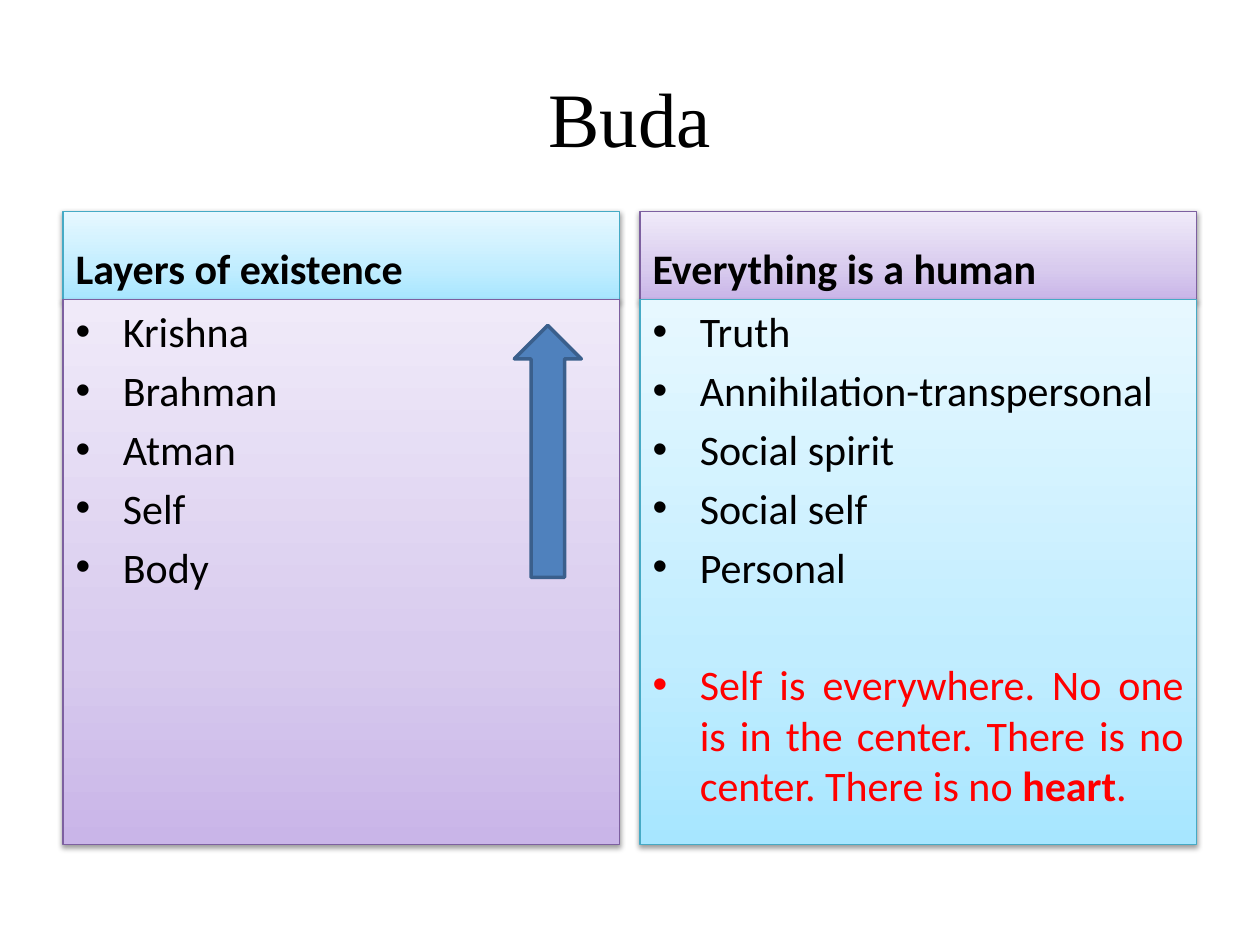
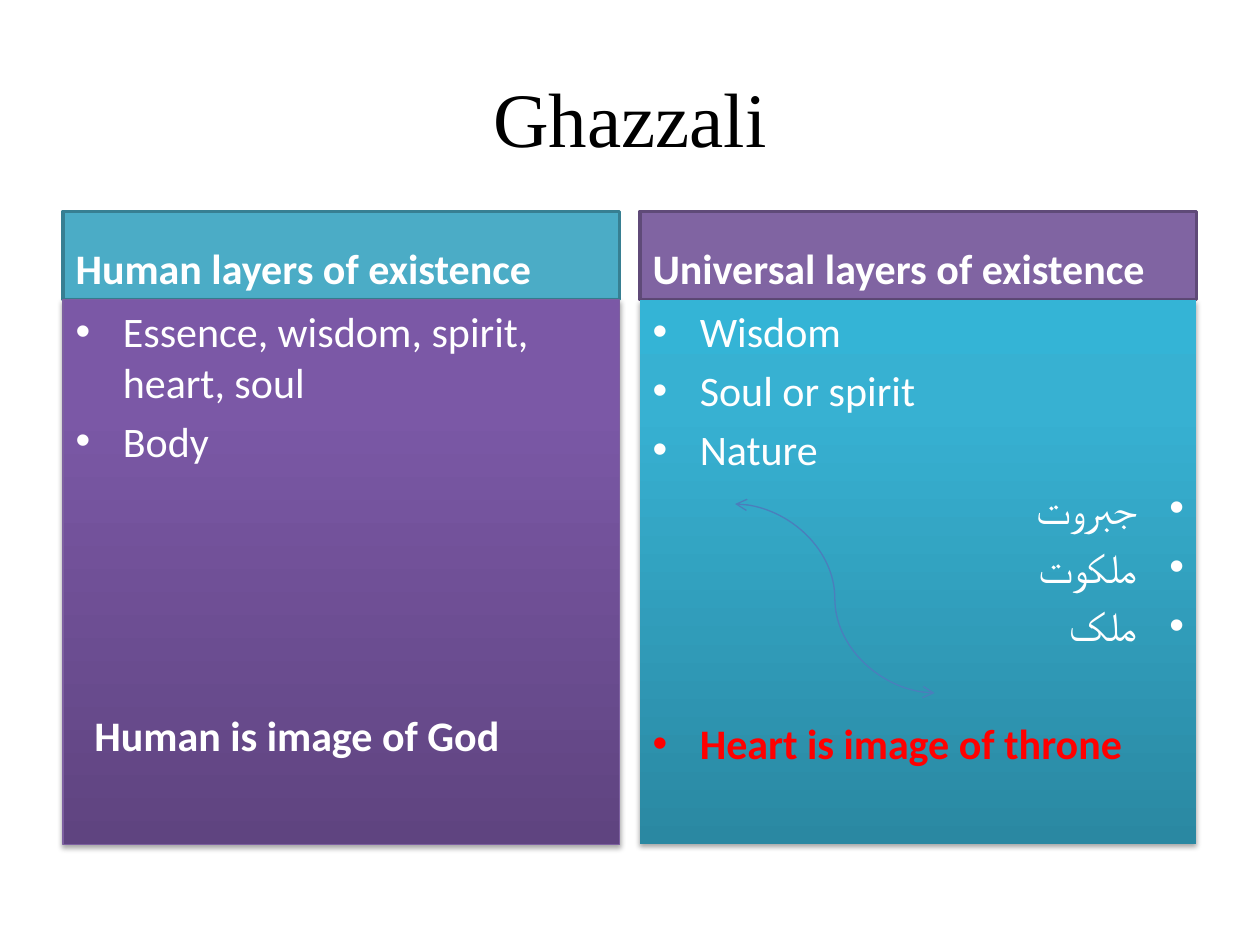
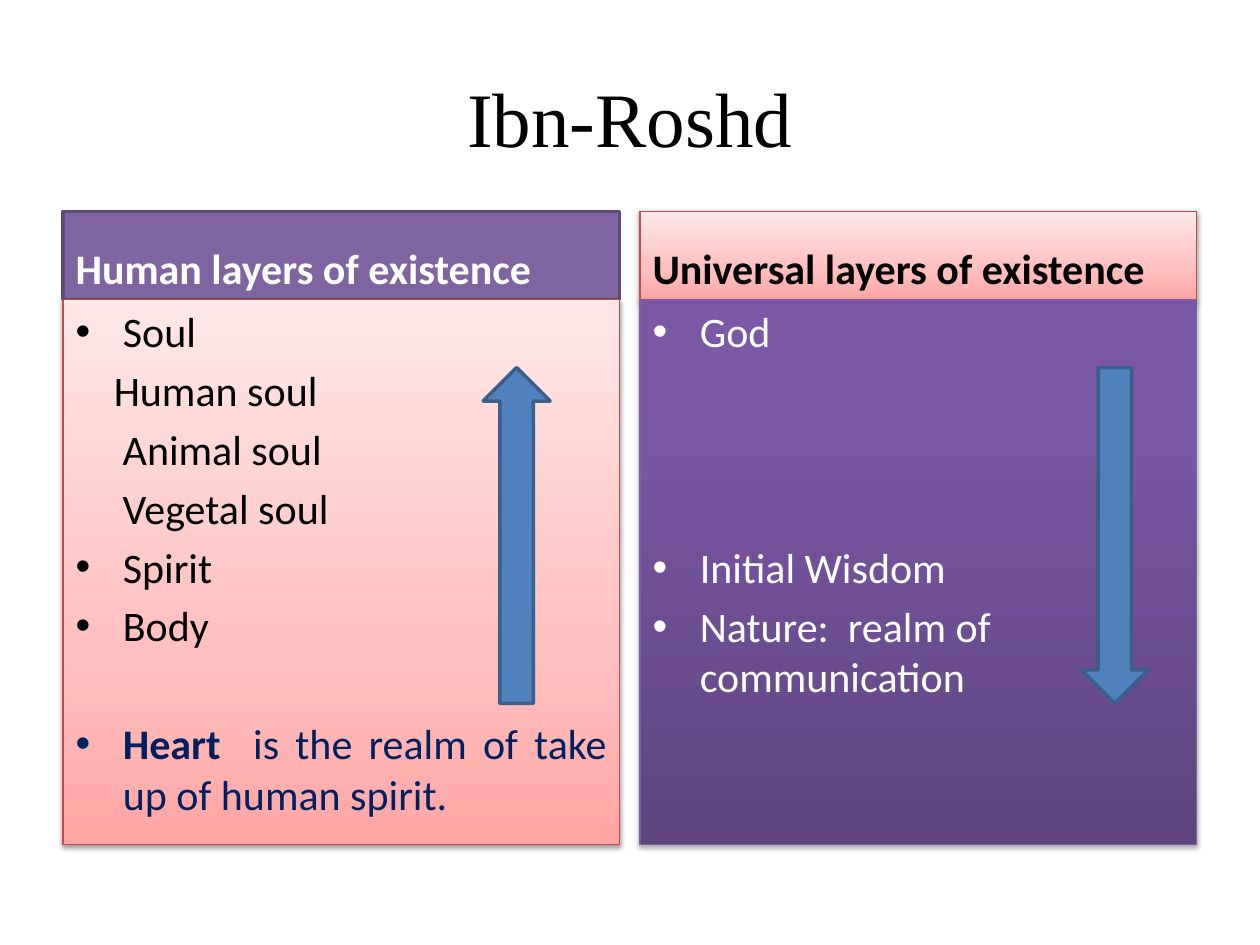
"""Build three slides comparing layers of existence in two coloured columns."""
from copy import deepcopy
from dataclasses import dataclass, field

from lxml import etree
from pptx import Presentation
from pptx import util as u
from pptx.dml.color import RGBColor
from pptx.enum import shapes, text
from pptx.oxml.ns import qn


@dataclass
class Theme:
    title_font: str = "Times New Roman"
    body_font: str = "Calibri"
    title_size: int = 44
    body_size: int = 24
    line_pitch: float = 33.7
    paragraph_gap: float = 4.8
    black: str = "000000"
    white: str = "FFFFFF"
    red: str = "FF0000"
    navy: str = "002060"
    arrow_fill: str = "4F81BD"
    arrow_line: str = "3A5F8C"
    curve_line: str = "4B7EBC"
    soft_shadow: tuple = (38, 1.6)
    deep_shadow: tuple = (35, 1.8)
    panels: dict = field(default_factory=dict)


@dataclass
class Item:
    runs: list
    color: str = ""
    blanks: int = 0
    indent: float = 0
    align: object = None
    rtl: bool = False


theme = Theme()
theme.panels = {
    "pale aqua": ([(0, "A7E6FF"), (35, "C1EDFF"), (100, "E7F8FF")], "46AAC5", 0.75, theme.black, theme.soft_shadow),
    "pale purple": ([(0, "C9B5E8"), (35, "D8CBEE"), (100, "F0EAF9")], "7D60A0", 0.75, theme.black, theme.soft_shadow),
    "pale red": ([(0, "FFA6A5"), (35, "FFC0BF"), (100, "FFE7E7")], "BF4C48", 0.75, theme.black, theme.soft_shadow),
    "deep purple": ([(0, "5F4480"), (80, "7B58A6"), (100, "7C57A8")], "7D60A0", 0.75, theme.white, theme.deep_shadow),
    "deep aqua": ([(0, "2A88A2"), (80, "37B1D2"), (100, "34B4D6")], None, 0, theme.white, theme.deep_shadow),
    "flat aqua": ([(0, "4BACC6")], "377F92", 2, theme.white, None),
    "flat purple": ([(0, "8064A2")], "5F4A78", 2, theme.white, None),
}


def add_run(paragraph, words, font_name, size, color, bold=False):
    """Append one formatted run."""
    run = paragraph.add_run()
    run.text = words
    run.font.name = font_name
    run.font.size = u.Pt(size)
    run.font.bold = bold
    run.font.color.rgb = RGBColor.from_string(color)


def paint_panel(shape, panel):
    """Give a placeholder its fill, outline and shadow."""
    stops, line_color, line_width, _, shadow = panel
    properties = shape._element.spPr
    if len(stops) == 1:
        shape.fill.solid()
        shape.fill.fore_color.rgb = RGBColor.from_string(stops[0][1])
    else:
        shape.fill.gradient()
        shape.fill.gradient_angle = 90
        stop_list = properties.find(".//" + qn("a:gsLst"))
        stop_list.append(deepcopy(stop_list[-1]))
        for stop, (position, color) in zip(shape.fill.gradient_stops, stops):
            stop.position = position / 100
            stop.color.rgb = RGBColor.from_string(color)
    if line_color:
        shape.line.color.rgb = RGBColor.from_string(line_color)
        shape.line.width = u.Pt(line_width)
    else:
        shape.line.fill.background()
    shape.shadow.inherit = False
    if shadow:
        opacity, distance = shadow
        effects = properties.find(qn("a:effectLst"))
        outer = etree.SubElement(effects, qn("a:outerShdw"), blurRad=str(u.Pt(3.1)),
                                 dist=str(u.Pt(distance)), dir="5400000", rotWithShape="0")
        shadow_color = etree.SubElement(outer, qn("a:srgbClr"), val=theme.black)
        etree.SubElement(shadow_color, qn("a:alpha"), val=str(opacity * 1000))


justify = text.PP_ALIGN.JUSTIFY
up, down = shapes.MSO_SHAPE.UP_ARROW, shapes.MSO_SHAPE.DOWN_ARROW
slides = [
    {
        "title": "Buda",
        "columns": [
            ("Layers of existence", "pale aqua", "pale purple",
             ["Krishna", "Brahman", "Atman", "Self", "Body"]),
            ("Everything is a human", "pale purple", "pale aqua",
             ["Truth", "Annihilation-transpersonal", "Social spirit", "Social self", "Personal",
              Item([("Self is everywhere. No one is in the center. There is no center. There is no ", False),
                    ("heart", True), (".", False)], theme.red, blanks=1, align=justify)]),
        ],
        "arrows": [(up, 10.37, 6.56, 5.08)],
        "curves": [],
    },
    {
        "title": "Ghazzali",
        "columns": [
            ("Human layers of existence", "flat aqua", "deep purple",
             ["Essence, wisdom, spirit, heart, soul", "Body",
              Item([("Human is image of God", True)], blanks=4, indent=0.38)]),
            ("Universal layers of existence", "flat purple", "deep aqua",
             ["Wisdom", "Soul or spirit", "Nature",
              *[Item([(word, False)], align=text.PP_ALIGN.RIGHT, rtl=True)
                for word in ("جبروت", "ملکوت", "ملک")],
              Item([("Heart is image of throne", True)], theme.red, blanks=1)]),
        ],
        "arrows": [],
        "curves": [(14.82, 10.16, 18.84, 13.97)],
    },
    {
        "title": "Ibn-Roshd",
        "columns": [
            ("Human layers of existence", "flat purple", "pale red",
             ["Soul", Item([("Human soul", False)], indent=0.77),
              Item([("Animal soul", False)], indent=0.95),
              Item([("Vegetal soul", False)], indent=0.95), "Spirit", "Body",
              Item([("Heart", True), ("  is the realm of take up of human spirit.", False)],
                   theme.navy, blanks=1, align=justify)]),
            ("Universal layers of existence", "pale red", "deep purple",
             ["God", Item([("Initial Wisdom", False)], blanks=3),
              "Nature:  realm of communication"]),
        ],
        "arrows": [(down, 21.8, 7.41, 6.77), (up, 9.74, 7.41, 6.77)],
        "curves": [],
    },
]

presentation = Presentation()
presentation.slide_width, presentation.slide_height = u.Cm(25.4), u.Cm(19.05)
comparison_layout = presentation.slide_layouts[4]
margin, column_width, column_step = 1.27, 11.22, 11.63
header_top, header_height, list_height = 4.26, 1.78, 10.98

for content in slides:
    slide = presentation.slides.add_slide(comparison_layout)
    title = slide.shapes.title
    title.left, title.top, title.width, title.height = u.Cm(margin), u.Cm(0.76), u.Cm(22.86), u.Cm(3.18)
    title.text_frame.vertical_anchor = text.MSO_ANCHOR.MIDDLE
    title_paragraph = title.text_frame.paragraphs[0]
    title_paragraph.alignment = text.PP_ALIGN.CENTER
    add_run(title_paragraph, content["title"], theme.title_font, theme.title_size, theme.black)

    for column, (heading, header_panel, list_panel, items) in enumerate(content["columns"]):
        header, body = slide.placeholders[2 * column + 1], slide.placeholders[2 * column + 2]
        for shape, panel_name, top, height in (
            (header, header_panel, header_top, header_height),
            (body, list_panel, header_top + header_height, list_height),
        ):
            shape.left, shape.top = u.Cm(margin + column * column_step), u.Cm(top)
            shape.width, shape.height = u.Cm(column_width), u.Cm(height)
            shape.text_frame.auto_size = text.MSO_AUTO_SIZE.NONE
            paint_panel(shape, theme.panels[panel_name])
        header.text_frame.vertical_anchor = text.MSO_ANCHOR.BOTTOM
        add_run(header.text_frame.paragraphs[0], heading, theme.body_font, theme.body_size,
                theme.panels[header_panel][3], True)

        for index, item in enumerate(items):
            if isinstance(item, str):
                item = Item([(item, False)])
            paragraph = body.text_frame.add_paragraph() if index else body.text_frame.paragraphs[0]
            paragraph_properties = paragraph._p.get_or_add_pPr()
            if item.align is not None:
                paragraph.alignment = item.align
            if item.rtl:
                paragraph_properties.set("rtl", "1")
            if item.blanks:
                paragraph.space_before = u.Pt(theme.paragraph_gap + item.blanks * theme.line_pitch)
            if item.indent:
                paragraph_properties.set("marL", str(u.Cm(item.indent)))
                paragraph_properties.set("indent", "0")
                etree.SubElement(paragraph_properties, qn("a:buNone"))
            for words, bold in item.runs:
                add_run(paragraph, words, theme.body_font, theme.body_size,
                        item.color or theme.panels[list_panel][3], bold)

    for kind, left, top, height in content["arrows"]:
        arrow = slide.shapes.add_shape(kind, u.Cm(left), u.Cm(top), u.Cm(1.35), u.Cm(height))
        arrow.shadow.inherit = False
        arrow.fill.solid()
        arrow.fill.fore_color.rgb = RGBColor.from_string(theme.arrow_fill)
        arrow.line.color.rgb = RGBColor.from_string(theme.arrow_line)
        arrow.line.width = u.Pt(2)

    for ends in content["curves"]:
        curve = slide.shapes.add_connector(shapes.MSO_CONNECTOR.CURVE, *[u.Cm(end) for end in ends])
        curve.line.color.rgb = RGBColor.from_string(theme.curve_line)
        curve.line.width = u.Pt(0.75)
        for tag in ("a:headEnd", "a:tailEnd"):
            etree.SubElement(curve.line._get_or_add_ln(), qn(tag), type="arrow")
        etree.SubElement(curve._element.spPr, qn("a:effectLst"))

presentation.save("out.pptx")
